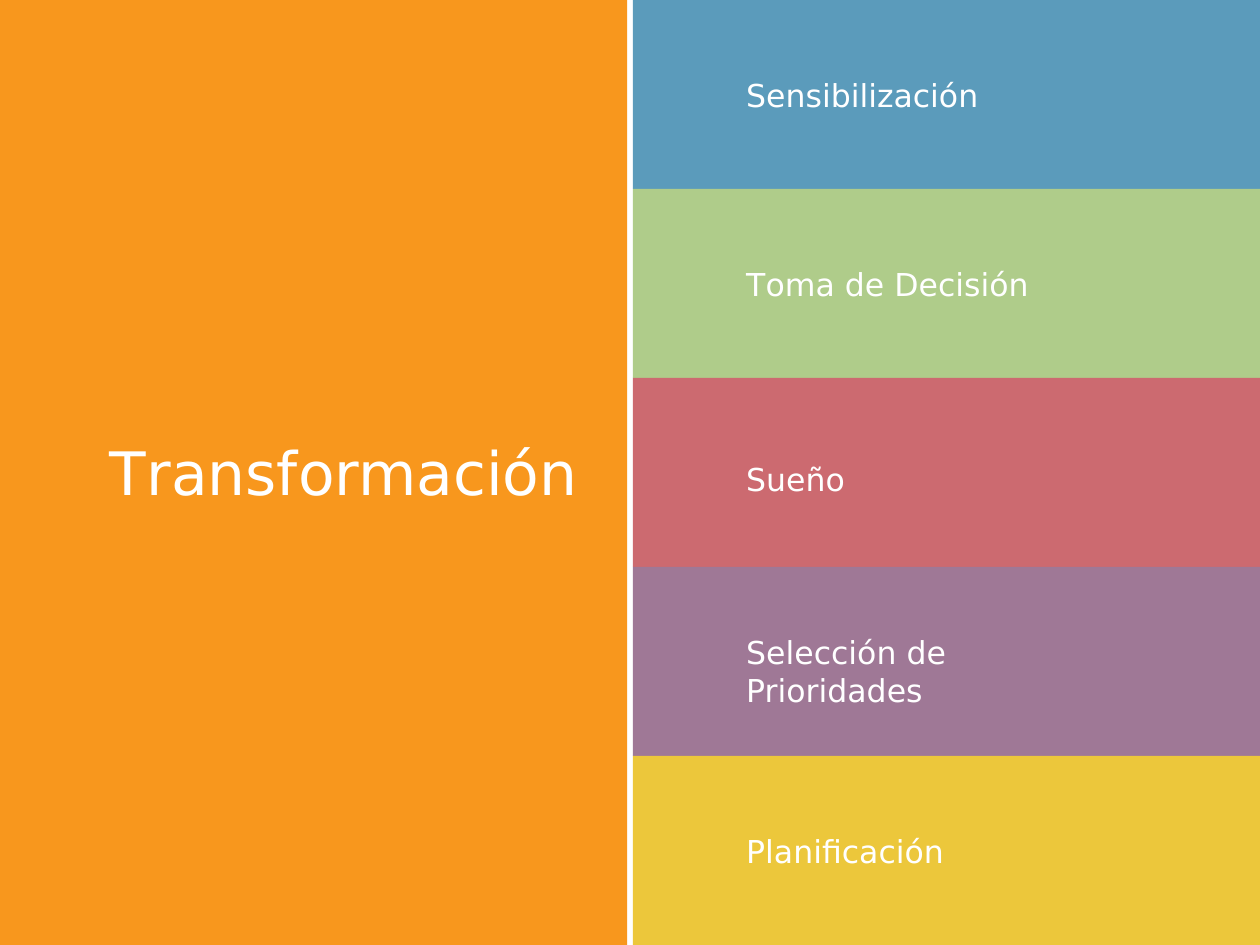
from pptx import Presentation, util as u
from pptx.dml.color import RGBColor
from pptx.enum import shapes, text

WIDE, HIGH = 11.11, 8.33
HALF = 5.53
FONT = "DejaVu Sans"
WHITE = "FFFFFF"
STEPS = [
    ("5B9BBB", [("Sensibilización", 0)], 0.67, 2.4, 0.25),
    ("AFCC8A", [("T", -2.1), ("oma de Decisión", 0)], 0.67, 2.72, 0.34),
    ("CC6A70", [("Sueño", 0)], 0.72, 0.91, 0.34),
    ("9F7896", [("Selección de Prioridades", 0)], 0.58, 3.19, 0.34),
    ("ECC73B", [("Planificación", 0)], 0.67, 1.93, 0.34),
]


def color(code):
    """Turn a hex string into a colour."""
    return RGBColor.from_string(code)


def panel(slide, box, fill):
    """Draw a plain filled rectangle."""
    rect = slide.shapes.add_shape(
        shapes.MSO_SHAPE.RECTANGLE, *[u.Inches(v) for v in box])
    rect.shadow.inherit = False
    rect.fill.solid()
    rect.fill.fore_color.rgb = color(fill)
    rect.line.fill.background()


def label(slide, box, runs, size, lead=None):
    """Write white text, given as pairs of words and letter spacing."""
    frame = slide.shapes.add_textbox(*[u.Inches(v) for v in box]).text_frame
    frame.word_wrap = True
    frame.vertical_anchor = text.MSO_ANCHOR.TOP
    frame.margin_left = frame.margin_right = 0
    frame.margin_top = frame.margin_bottom = 0
    para = frame.paragraphs[0]
    para._p.get_or_add_pPr().set("marL", str(u.Inches(0.01)))
    if lead:
        para.line_spacing = u.Pt(lead)
    for words, gap in runs:
        run = para.add_run()
        run.text = words
        run.font.name = FONT
        run.font.size = u.Pt(size)
        run.font.color.rgb = color(WHITE)
        if gap:
            run._r.get_or_add_rPr().set("spc", str(round(gap * 100)))


def title(slide, x, y, w, h):
    """Fill the left half with the topic."""
    panel(slide, (x, y, w, h), "F8971D")
    runs = [("T", -3.8), ("r", -0.7), ("ansformación", 0)]
    label(slide, (x + 0.96, y + 3.84, 4.26, 0.66), runs, 38, 45.5)


def steps(slide, x, y, w, h):
    """Stack the steps as equal bands."""
    band = h / len(STEPS)
    for i, (fill, runs, drop, wide, high) in enumerate(STEPS):
        top = y + i * band
        panel(slide, (x, top, w, band), fill)
        label(slide, (x + 0.99, top + drop, wide, high), runs, 20)


def main():
    """Build and save the slide."""
    deck = Presentation()
    deck.slide_width = u.Inches(WIDE)
    deck.slide_height = u.Inches(HIGH)
    slide = deck.slides.add_slide(deck.slide_layouts[6])
    title(slide, 0, 0, HALF, HIGH)
    steps(slide, WIDE - HALF, 0, HALF, HIGH)
    deck.save("out.pptx")


if __name__ == "__main__":
    main()
